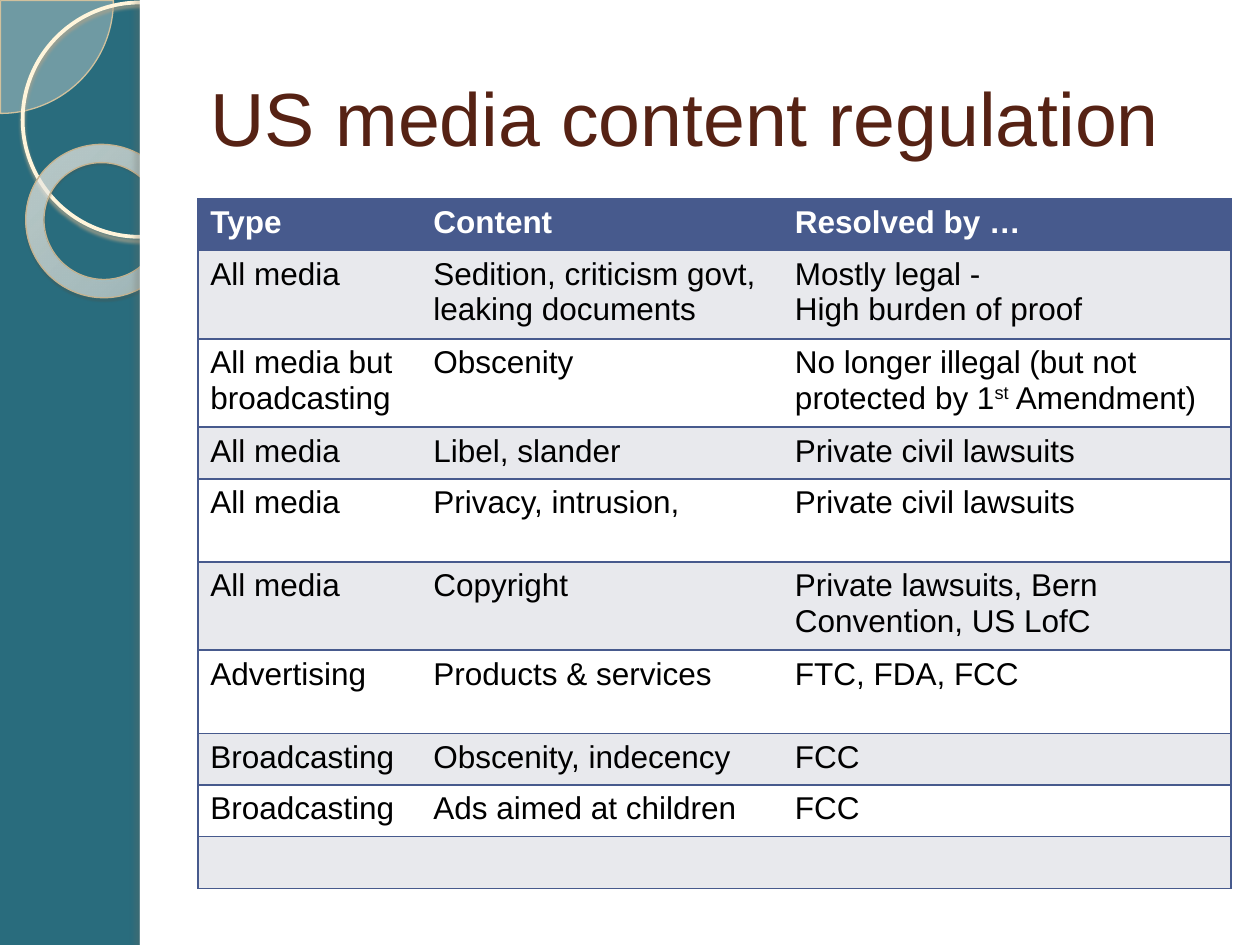
from lxml.etree import SubElement
from pptx import Presentation
from pptx.dml.color import RGBColor
from pptx.enum.shapes import MSO_SHAPE
from pptx.enum.text import MSO_ANCHOR
from pptx.oxml import parse_xml
from pptx.oxml.ns import nsdecls, qn
from pptx.util import Inches, Pt

THEME = {
    "font": "Arial", "title_size": 43, "body_size": 18,
    "title": "562214", "header_text": "FFFFFF", "text": "000000",
    "teal": "296C7D", "panel": "FFFFFF", "accent": "475A8D",
    "bands": ("FFFFFF", "E8E9ED"),
}
TITLE = "US media content regulation"
COLUMN_WIDTHS = (1.77, 2.87, 3.56)
ONE_LINE, TWO_LINES = 0.41, 0.66

# Row height and cells; text between carets is superscript
ROWS = [
    (ONE_LINE, ("Type", "Content", "Resolved by …")),
    (TWO_LINES, ("All media", "Sedition, criticism govt, leaking documents",
                 "Mostly legal -\nHigh burden of proof")),
    (TWO_LINES, ("All media but broadcasting", "Obscenity",
                 "No longer illegal (but not protected by 1^st^ Amendment)")),
    (ONE_LINE, ("All media", "Libel, slander", "Private civil lawsuits")),
    (TWO_LINES, ("All media", "Privacy, intrusion,", "Private civil lawsuits")),
    (TWO_LINES, ("All media", "Copyright",
                 "Private lawsuits, Bern Convention, US LofC")),
    (TWO_LINES, ("Advertising", "Products & services", "FTC, FDA, FCC")),
    (ONE_LINE, ("Broadcasting", "Obscenity, indecency", "FCC")),
    (ONE_LINE, ("Broadcasting", "Ads aimed at children", "FCC")),
    (ONE_LINE, ("", "", "")),
]

# Gradient stops are (position, colour, opacity);
# shadows are (colour, opacity, blur, distance, angle)
DECORATIONS = [
    {"kind": MSO_SHAPE.PIE, "at": (-0.89, -0.89, 1.79, 1.79),
     "adjust": (0, 54.02), "fill": "FEF9F3", "alpha": 33,
     "line": ("D1C19D", 0.75)},
    {"kind": MSO_SHAPE.OVAL, "at": (0.18, 0.02, 1.86, 1.86),
     "line": ("FFF5DB", 2.15), "shadow": ("ADA48C", 85, 2, 2, 90)},
    {"kind": MSO_SHAPE.DONUT, "at": (0.2, 1.15, 1.23, 1.21),
     "adjust": (0.12,), "rotation": 38.6,
     "gradient": ((0, "FEFBF4", 70), (70, "FFFDF8", 55), (100, "EDCF8C", 60)),
     "line": ("C5B390", 0.75), "shadow": ("564E40", 35, 1, 1.2, 75)},
    {"kind": MSO_SHAPE.RECTANGLE, "at": (1.11, 0, 8.89, 7.5),
     "fill": THEME["panel"]},
    {"kind": MSO_SHAPE.RECTANGLE, "at": (1.11, 0, 0.08, 7.5),
     "fill": THEME["panel"], "shadow": ("6F6A5F", 25, 3, 3, 180)},
]


def add_color(parent, color, alpha=100):
    clr = SubElement(parent, qn("a:srgbClr"), val=color)
    if alpha < 100:
        SubElement(clr, qn("a:alpha"), val=str(alpha * 1000))


def paint(fill, color):
    fill.solid()
    fill.fore_color.rgb = RGBColor.from_string(color)


def radial_gradient(stops):
    """Gradient that spreads from the top left corner."""
    grad = parse_xml(f'<a:gradFill {nsdecls("a")} rotWithShape="1"><a:gsLst/>'
                     '<a:path path="circle"><a:fillToRect r="100000" b="100000"/>'
                     '</a:path></a:gradFill>')
    for pos, color, alpha in stops:
        add_color(SubElement(grad[0], qn("a:gs"), pos=str(pos * 1000)), color, alpha)
    return grad


def add_decoration(slide, item):
    sp = slide.shapes.add_shape(item["kind"], *map(Inches, item["at"]))
    sp.shadow.inherit = False
    sp.rotation = item.get("rotation", 0)
    for i, value in enumerate(item.get("adjust", ())):
        sp.adjustments[i] = value
    spPr = sp._element.spPr
    if "fill" in item or "gradient" in item:
        paint(sp.fill, item.get("fill", THEME["panel"]))
        solid = spPr.find(qn("a:solidFill"))
        if "gradient" in item:
            spPr.replace(solid, radial_gradient(item["gradient"]))
        elif "alpha" in item:
            SubElement(solid[0], qn("a:alpha"), val=str(item["alpha"] * 1000))
    else:
        sp.fill.background()
    if "line" in item:
        color, width = item["line"]
        paint(sp.line.fill, color)
        sp.line.width = Pt(width)
    else:
        sp.line.fill.background()
    if "shadow" in item:
        color, alpha, blur, dist, angle = item["shadow"]
        outer = SubElement(spPr.find(qn("a:effectLst")), qn("a:outerShdw"),
                           blurRad=str(Pt(blur)), dist=str(Pt(dist)),
                           dir=str(angle * 60000), algn="tl", rotWithShape="0")
        add_color(outer, color, alpha)


def add_text(p, text, color, **formats):
    formats = {"name": THEME["font"], **formats}
    for i, part in enumerate(text.split("^")):
        for j, line in enumerate(part.split("\n")):
            if j:
                p.add_line_break()
            r = p.add_run()
            r.text = line
            for key, value in formats.items():
                setattr(r.font, key, value)
            r.font.color.rgb = RGBColor.from_string(color)
            if i % 2:
                r._r.get_or_add_rPr().set("baseline", "30000")


def add_title(slide):
    sp = slide.shapes.add_textbox(*map(Inches, (1.57, 0.3, 8.2, 1.25)))
    tf = sp.text_frame
    tf.word_wrap = True
    tf.vertical_anchor = MSO_ANCHOR.MIDDLE
    add_text(tf.paragraphs[0], TITLE, THEME["title"], size=Pt(THEME["title_size"]))


def set_borders(cell, visible):
    tcPr = cell._tc.get_or_add_tcPr()
    for side in "LRTB":
        ln = SubElement(tcPr, qn(f"a:ln{side}"), w=str(Pt(1)))
        if side in visible:
            add_color(SubElement(ln, qn("a:solidFill")), THEME["accent"])
        else:
            SubElement(ln, qn("a:noFill"))


def add_regulation_table(slide):
    heights = [height for height, _ in ROWS]
    box = map(Inches, (1.57, 1.58, sum(COLUMN_WIDTHS), sum(heights)))
    table = slide.shapes.add_table(len(ROWS), len(COLUMN_WIDTHS), *box).table
    table.horz_banding = False
    for column, width in zip(table.columns, COLUMN_WIDTHS):
        column.width = Inches(width)
    last = len(COLUMN_WIDTHS) - 1
    for i, (height, texts) in enumerate(ROWS):
        table.rows[i].height = Inches(height)
        header = i == 0
        for j, text in enumerate(texts):
            cell = table.cell(i, j)
            set_borders(cell, "TB" + {0: "L", last: "R"}.get(j, ""))
            paint(cell.fill, THEME["accent"] if header else THEME["bands"][i % 2])
            if text:
                add_text(cell.text_frame.paragraphs[0], text,
                         THEME["header_text" if header else "text"],
                         size=Pt(THEME["body_size"]), bold=header)


def main():
    prs = Presentation()
    prs.slide_width, prs.slide_height = Inches(10), Inches(7.5)
    slide = prs.slides.add_slide(prs.slide_layouts[6])
    paint(slide.background.fill, THEME["teal"])
    for item in DECORATIONS:
        add_decoration(slide, item)
    add_title(slide)
    add_regulation_table(slide)
    prs.save("out.pptx")


if __name__ == "__main__":
    main()
